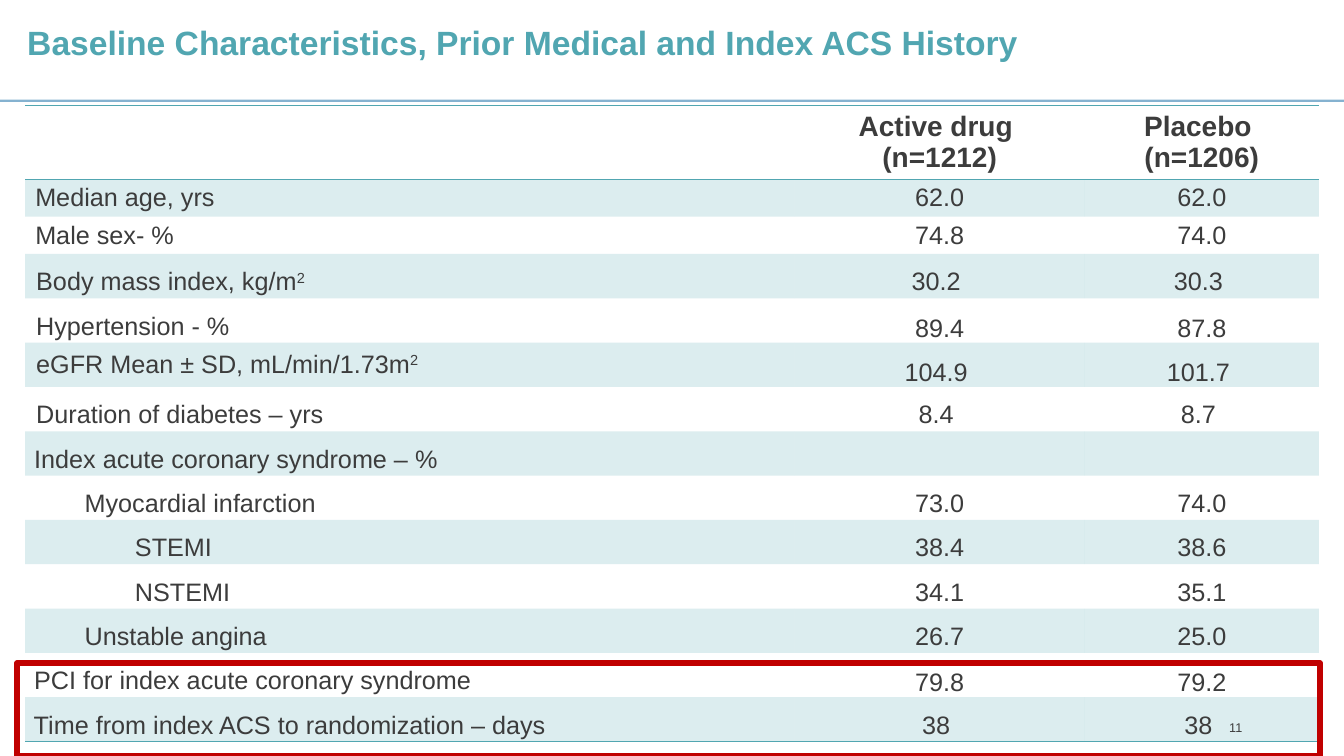
from lxml import etree
from pptx import Presentation
from pptx.dml.color import RGBColor
from pptx.enum import shapes, text
from pptx.oxml import ns
from pptx.util import Inches, Pt

TEAL = RGBColor(0x51, 0xA6, 0xB1)
GREY = RGBColor(0x3C, 0x3C, 0x3C)
BLUE = RGBColor(0x0D, 0x67, 0xA2)
RED = RGBColor(0xC0, 0x00, 0x00)
NO_GRID_STYLE = "{2D5ABB26-0587-4C30-8999-92F81FD0307C}"
LEFT, CENTER, RIGHT = text.PP_ALIGN.LEFT, text.PP_ALIGN.CENTER, text.PP_ALIGN.RIGHT
TOP, MIDDLE, BOTTOM = text.MSO_ANCHOR.TOP, text.MSO_ANCHOR.MIDDLE, text.MSO_ANCHOR.BOTTOM


def write(frame, words, size=18, color=GREY, bold=False, align=LEFT, spacing=None, indent=0):
    for number, line in enumerate(words.split("\n")):
        para = frame.add_paragraph() if number else frame.paragraphs[0]
        para.alignment = align
        para.line_spacing = spacing
        if indent:
            para._p.get_or_add_pPr().set("marL", str(Inches(indent)))
        for position, part in enumerate(line.split("^")):
            span = para.add_run()
            span.text = part
            span.font.name = "Arial"
            span.font.size = Pt(size)
            span.font.bold = bold
            span.font.color.rgb = color
            if position:
                span._r.get_or_add_rPr().set("baseline", "30000")


def set_alpha(element, percent):
    for color in element.iter(ns.qn("a:srgbClr")):
        etree.SubElement(color, ns.qn("a:alpha")).set("val", str(percent * 1000))


deck = Presentation()
deck.slide_width, deck.slide_height = Inches(13.33), Inches(7.5)
page = deck.slides.add_slide(deck.slide_layouts[5])

title = page.shapes.title
title.left, title.top = Inches(0.17), Inches(0.17)
title.width, title.height = Inches(10.43), Inches(0.73)
title.text_frame.vertical_anchor = TOP
write(title.text_frame, "Baseline Characteristics, Prior Medical and Index ACS History",
      size=24, color=TEAL, bold=True)

rule = page.shapes.add_connector(shapes.MSO_CONNECTOR.STRAIGHT,
                                 Inches(0), Inches(1), Inches(13.33), Inches(1))
rule.line.color.rgb = BLUE
rule.line.width = Pt(1.5)
set_alpha(rule._element.spPr, 50)
etree.SubElement(rule._element.spPr, ns.qn("a:effectLst"))

rows = [
    ("", "Active drug \n(n=1212)", "Placebo \n(n=1206)", 0.04, MIDDLE, MIDDLE, 0),
    ("Median age, yrs", "62.0", "62.0", 0.1, MIDDLE, MIDDLE, 0),
    ("Male sex- %", "74.8", "74.0", 0.1, MIDDLE, MIDDLE, 0),
    (" Body mass index, kg/m^2", "30.2 ", "30.3 ", 0.04, TOP, TOP, 0),
    (" Hypertension - %", "89.4", "87.8", 0.04, TOP, BOTTOM, 0),
    (" eGFR Mean ± SD, mL/min/1.73m^2", "104.9 ", "101.7 ", 0.04, MIDDLE, BOTTOM, 0),
    (" Duration of diabetes – yrs", "8.4 ", "8.7 ", 0.04, TOP, TOP, 0),
    (" Index acute coronary syndrome – %", "", "", 0.02, TOP, TOP, 0),
    (" Myocardial infarction", "73.0", "74.0", 0.02, TOP, TOP, 0.5),
    (" STEMI", "38.4", "38.6", 0.02, TOP, TOP, 1),
    (" NSTEMI", "34.1", "35.1", 0.02, TOP, TOP, 1),
    (" Unstable angina", "26.7", "25.0", 0.02, TOP, TOP, 0.5),
    (" PCI for index acute coronary syndrome", "79.8", "79.2", 0.02, TOP, BOTTOM, 0),
    (" Time from index ACS to randomization – days", "38 ", "38 ", 0.02, TOP, TOP, 0),
]
heights = [0.73] + [0.37] * 2 + [0.44] * 11
borders = {0: ("lnT", "lnB"), len(rows) - 1: ("lnB",)}

table = page.shapes.add_table(len(rows), 3, Inches(0.25), Inches(1.05),
                              Inches(12.83), Inches(sum(heights))).table
table.first_row = table.horz_banding = False
table._tbl.tblPr.find(ns.qn("a:tableStyleId")).text = NO_GRID_STYLE
for column, width in zip(table.columns, (7.63, 2.88, 2.32)):
    column.width = Inches(width)

for index, (*words, inset, label_anchor, value_anchor, indent) in enumerate(rows):
    table.rows[index].height = Inches(heights[index])
    for column, content in enumerate(words):
        cell = table.cell(index, column)
        cell.margin_left = cell.margin_right = Inches(inset)
        cell.margin_top = cell.margin_bottom = Inches(0.04 if inset == 0.1 else 0)
        anchor = value_anchor if column else label_anchor
        cell.vertical_anchor = anchor
        write(cell.text_frame, content, size=18 if index else 20, bold=index == 0,
              align=CENTER if column else LEFT, indent=0 if column else indent,
              spacing=None if anchor == MIDDLE else 1.5)
        properties = cell._tc.get_or_add_tcPr()
        for side in borders.get(index, ()):
            edge = etree.SubElement(properties, ns.qn("a:" + side), w=str(Pt(1)))
            paint = etree.SubElement(edge, ns.qn("a:solidFill"))
            etree.SubElement(paint, ns.qn("a:srgbClr"), val=str(TEAL))
        if index % 2:
            cell.fill.solid()
            cell.fill.fore_color.rgb = TEAL
            set_alpha(properties.find(ns.qn("a:solidFill")), 20)
        else:
            cell.fill.background()

page_number = page.shapes.add_textbox(Inches(9.42), Inches(7.08), Inches(3), Inches(0.27))
page_number.text_frame.word_wrap = True
page_number.text_frame.vertical_anchor = MIDDLE
write(page_number.text_frame, "11", size=9, align=RIGHT)

highlight = page.shapes.add_shape(shapes.MSO_SHAPE.RECTANGLE,
                                  Inches(0.17), Inches(6.58), Inches(12.92), Inches(0.92))
highlight.shadow.inherit = False
highlight.fill.background()
highlight.line.color.rgb = RED
highlight.line.width = Pt(4.5)

deck.save("out.pptx")
